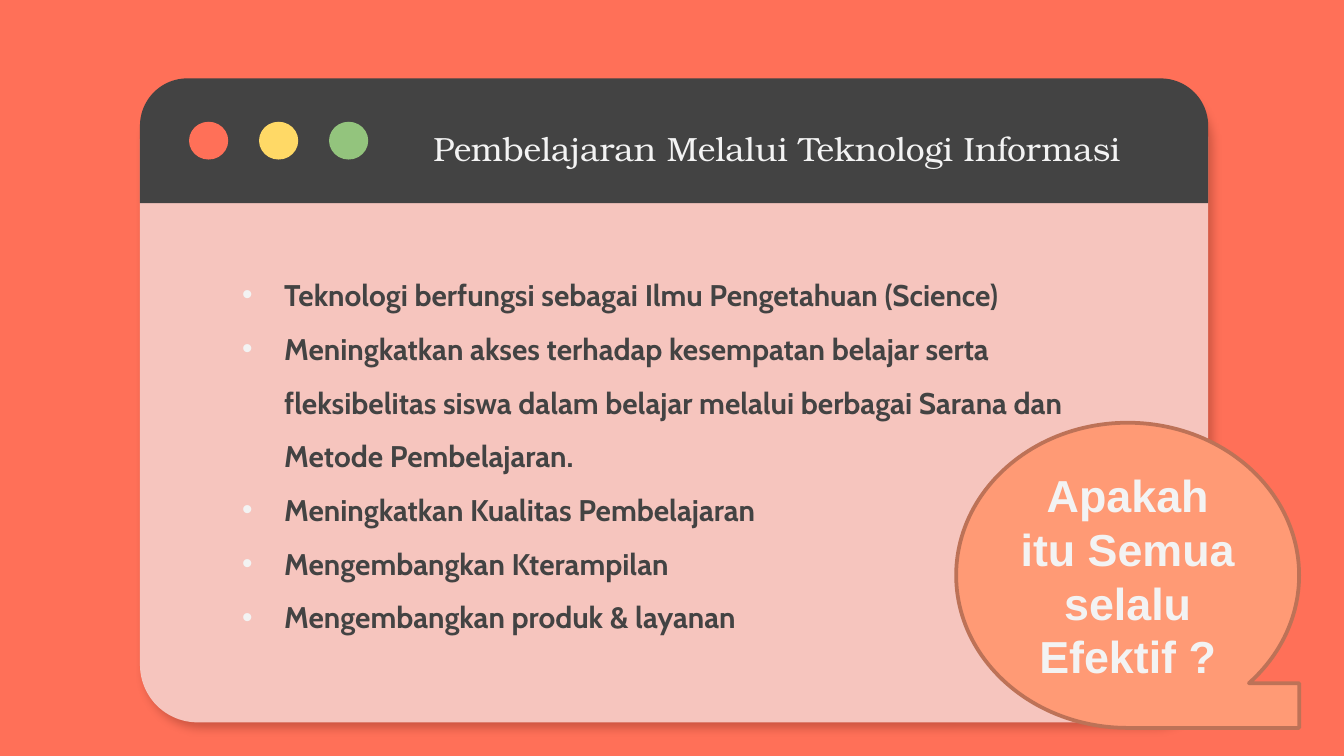
from lxml import etree
from pptx import Presentation
from pptx.dml.color import RGBColor
from pptx.enum.shapes import MSO_SHAPE
from pptx.enum.text import MSO_ANCHOR, PP_ALIGN
from pptx.oxml.ns import qn
from pptx.util import Emu, Pt

EMU_PER_PX = 9525
ROUNDED = MSO_SHAPE.ROUNDED_RECTANGLE
ROUNDED_TOP = MSO_SHAPE.ROUND_2_SAME_RECTANGLE
OVAL = MSO_SHAPE.OVAL
SPEECH = MSO_SHAPE.FLOWCHART_SEQUENTIAL_ACCESS_STORAGE
TOP, MIDDLE, BOTTOM = MSO_ANCHOR.TOP, MSO_ANCHOR.MIDDLE, MSO_ANCHOR.BOTTOM
LEFT, CENTER = PP_ALIGN.LEFT, PP_ALIGN.CENTER

CORAL, PINK, DARK, LIGHT = "FF7058", "F6C5BE", "434343", "F3F3F3"
YELLOW, GREEN, ORANGE, BROWN = "FFD966", "93C47D", "FF9A75", "BD7257"
SHADOW = "963A2A"

TITLE = "Pembelajaran Melalui Teknologi Informasi"
POINTS = [
    "Teknologi berfungsi sebagai Ilmu Pengetahuan (Science)",
    "Meningkatkan akses terhadap kesempatan belajar serta fleksibelitas siswa "
    "dalam belajar melalui berbagai Sarana dan Metode Pembelajaran.",
    "Meningkatkan Kualitas Pembelajaran",
    "Mengembangkan Kterampilan",
    "Mengembangkan produk & layanan",
]
QUESTION = "Apakah itu Semua selalu Efektif ?"


def px(length):
    return Emu(length * EMU_PER_PX)


def color(hex_code):
    return RGBColor.from_string(hex_code)


def add_bullet(paragraph, hex_code, indent):
    props = paragraph._p.get_or_add_pPr()
    props.set("marL", str(px(indent)))
    props.set("indent", str(px(-indent)))
    bullet_color = etree.SubElement(props, qn("a:buClr"))
    etree.SubElement(bullet_color, qn("a:srgbClr"), val=hex_code)
    etree.SubElement(props, qn("a:buFont"), typeface="Arial")
    etree.SubElement(props, qn("a:buChar"), char="•")


def add_shadow(shape, hex_code, alpha, blur, distance, angle):
    """Blur and distance are in points, alpha in percent, angle in degrees."""
    effects = shape._element.spPr.find(qn("a:effectLst"))
    outer = etree.SubElement(
        effects, qn("a:outerShdw"), blurRad=str(Pt(blur)), dist=str(Pt(distance)),
        dir=str(angle * 60000), algn="bl", rotWithShape="0")
    tint = etree.SubElement(outer, qn("a:srgbClr"), val=hex_code)
    etree.SubElement(tint, qn("a:alpha"), val=str(alpha * 1000))


def write(frame, paragraphs, *, size, font, fill, bold=False, align=LEFT,
          anchor=TOP, spacing=1.0, bullet=None, indent=30):
    frame.word_wrap = True
    frame.vertical_anchor = anchor
    for index, text in enumerate(paragraphs):
        paragraph = frame.add_paragraph() if index else frame.paragraphs[0]
        paragraph.alignment = align
        paragraph.line_spacing = spacing
        if bullet:
            add_bullet(paragraph, bullet, indent)
        run = paragraph.add_run()
        run.text = text
        run.font.size = Pt(size)
        run.font.name = font
        run.font.bold = bold
        run.font.color.rgb = color(fill)


class Deck:
    def __init__(self, width, height, background):
        self.presentation = Presentation()
        self.presentation.slide_width = px(width)
        self.presentation.slide_height = px(height)
        self.slide = self.presentation.slides.add_slide(
            self.presentation.slide_layouts[6])
        self.slide.background.fill.solid()
        self.slide.background.fill.fore_color.rgb = color(background)

    def shape(self, kind, x, y, width, height, fill, line=None, adjustments=()):
        shape = self.slide.shapes.add_shape(
            kind, px(x), px(y), px(width), px(height))
        shape.shadow.inherit = False
        shape.fill.solid()
        shape.fill.fore_color.rgb = color(fill)
        if line:
            shape.line.color.rgb = color(line)
            shape.line.width = Pt(2)
        else:
            shape.line.fill.background()
        for index, value in enumerate(adjustments):
            shape.adjustments[index] = value
        return shape

    def text(self, x, y, width, height, paragraphs, **style):
        frame = self.slide.shapes.add_textbox(
            px(x), px(y), px(width), px(height)).text_frame
        frame.margin_left = frame.margin_right = px(10)
        frame.margin_top = frame.margin_bottom = px(10)
        write(frame, paragraphs, **style)


def main():
    deck = Deck(960, 540, CORAL)

    window = deck.shape(ROUNDED, 100, 59, 763, 457, PINK, adjustments=[0.09])
    add_shadow(window, SHADOW, alpha=47, blur=4.5, distance=3.8, angle=49)
    deck.shape(ROUNDED_TOP, 100, 56, 763, 89, DARK, adjustments=[0.38, 0])
    for index, fill in enumerate([CORAL, YELLOW, GREEN]):
        deck.shape(OVAL, 135 + 50 * index, 87, 28, 27, fill)

    deck.text(163, 175, 637, 239, POINTS, size=16, font="Cabin", fill=DARK,
              bold=True, spacing=1.5, bullet=LIGHT)
    deck.text(199, 67, 712, 63, [TITLE], size=18, font="TeX Gyre Bonum",
              fill=LIGHT, align=CENTER, anchor=BOTTOM, spacing=1.1)

    bubble = deck.shape(SPEECH, 683, 302, 245, 218, ORANGE, line=BROWN)
    write(bubble.text_frame, [QUESTION], size=24, font="Arial", fill=LIGHT,
          bold=True, align=CENTER, anchor=MIDDLE)

    deck.presentation.save("out.pptx")


if __name__ == "__main__":
    main()
